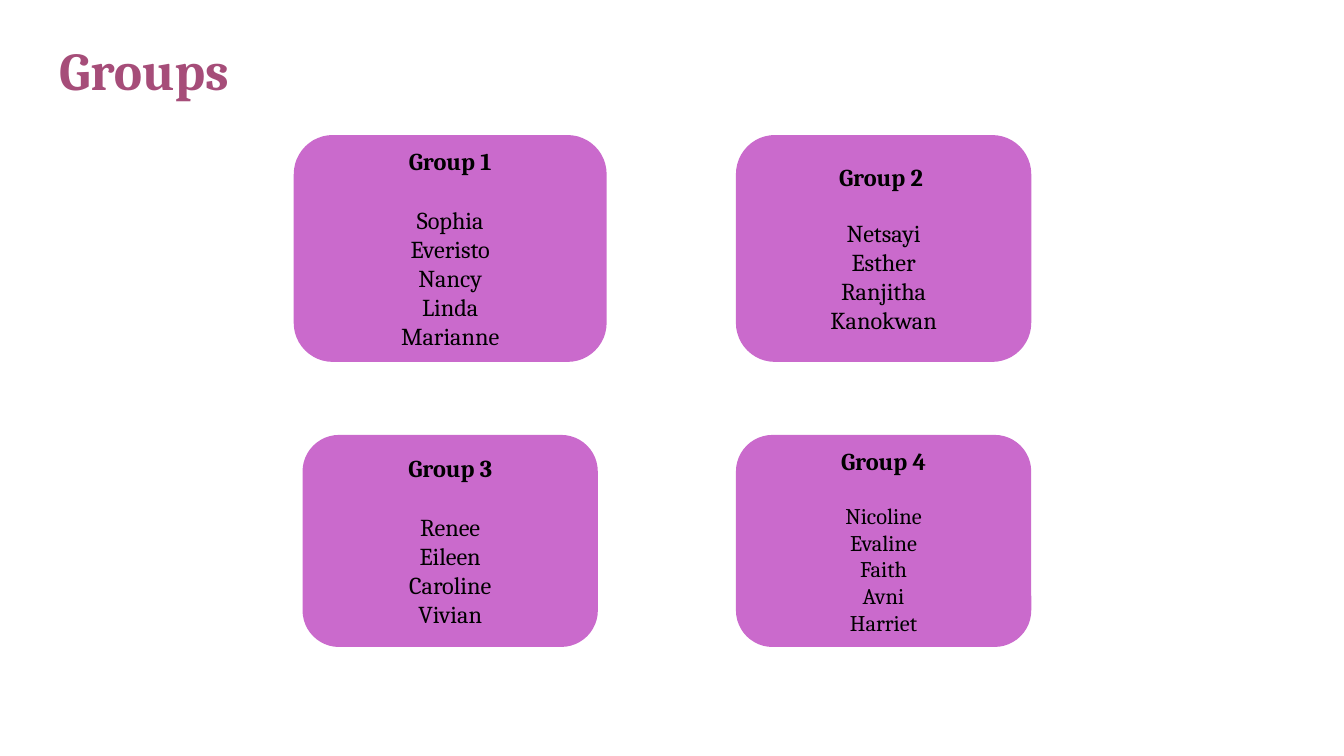
"""Build a slide with four groups of participants in rounded cards."""
from dataclasses import dataclass
from typing import Any

from pptx import Presentation
from pptx.dml.color import RGBColor
from pptx.enum.shapes import MSO_SHAPE
from pptx.enum.text import MSO_ANCHOR, MSO_AUTO_SIZE, PP_ALIGN
from pptx.slide import Slide
from pptx.util import Pt

FONT = "Cambria"
ORCHID = "CA6ACC"
PLUM = "A64D79"
BLACK = "000000"
HEADING_SIZE = 13
COLUMN_CENTERS = (241.2, 473.4)
ROW_TOPS = (73.4, 234)
ROW_HEIGHTS = (119.5, 111.6)


@dataclass(frozen=True)
class Group:
    heading: str
    members: tuple[str, ...]
    width: float = 156.2
    member_size: float = 13
    heading_gap: float = 15.6


GROUPS = (
    Group("Group 1", ("Sophia", "Everisto", "Nancy", "Linda", "Marianne"), width=165.6),
    Group("Group 2 ", ("Netsayi", "Esther", "Ranjitha", "Kanokwan"), heading_gap=14.4),
    Group("Group 3", ("Renee", "Eileen", "Caroline", "Vivian")),
    Group("Group 4", ("Nicoline", "Evaline", "Faith", "Avni", "Harriet"),
          member_size=12, heading_gap=14.4),
)


def color(hex_value: str) -> RGBColor:
    return RGBColor.from_string(hex_value)


def apply(target: Any, values: dict[str, Any]) -> None:
    for attribute, value in values.items():
        setattr(target, attribute, value)


def style_font(font: Any, size: float, hex_value: str, bold: bool) -> None:
    apply(font, {"name": FONT, "size": Pt(size), "bold": bold})
    font.color.rgb = color(hex_value)


def draw_title(slide: Slide, wording: str) -> None:
    title = slide.shapes.title
    apply(title, {"left": Pt(24.5), "top": Pt(14.4), "width": Pt(671), "height": Pt(45.4)})
    frame = title.text_frame
    frame.text = wording
    margins = ("margin_left", "margin_top", "margin_right", "margin_bottom")
    apply(frame, {"auto_size": MSO_AUTO_SIZE.NONE, "word_wrap": True,
                  "vertical_anchor": MSO_ANCHOR.MIDDLE} | dict.fromkeys(margins, Pt(7.2)))
    heading = frame.paragraphs[0]
    heading.alignment = PP_ALIGN.LEFT
    style_font(heading.runs[0].font, 28.6, PLUM, True)


def draw_group(slide: Slide, group: Group, row: int, column: int) -> None:
    card = slide.shapes.add_shape(
        MSO_SHAPE.ROUNDED_RECTANGLE,
        Pt(COLUMN_CENTERS[column] - group.width / 2), Pt(ROW_TOPS[row]),
        Pt(group.width), Pt(ROW_HEIGHTS[row]))
    card.shadow.inherit = False
    card.fill.solid()
    card.fill.fore_color.rgb = color(ORCHID)
    card.line.color.rgb = color(ORCHID)
    card.line.width = Pt(2)

    frame = card.text_frame
    apply(frame, {"word_wrap": True, "vertical_anchor": MSO_ANCHOR.MIDDLE})
    frame.text = "\n".join((group.heading, *group.members))
    for position, entry in enumerate(frame.paragraphs):
        is_heading = position == 0
        entry.alignment = PP_ALIGN.CENTER
        entry.space_after = Pt(group.heading_gap if is_heading else 0)
        size = HEADING_SIZE if is_heading else group.member_size
        style_font(entry.runs[0].font, size, BLACK, is_heading)


def main() -> None:
    deck = Presentation()
    apply(deck, {"slide_width": Pt(720), "slide_height": Pt(405)})
    slide = deck.slides.add_slide(deck.slide_layouts.get_by_name("Title Only"))
    draw_title(slide, "Groups")
    for index, group in enumerate(GROUPS):
        draw_group(slide, group, *divmod(index, len(COLUMN_CENTERS)))
    deck.save("out.pptx")


if __name__ == "__main__":
    main()
